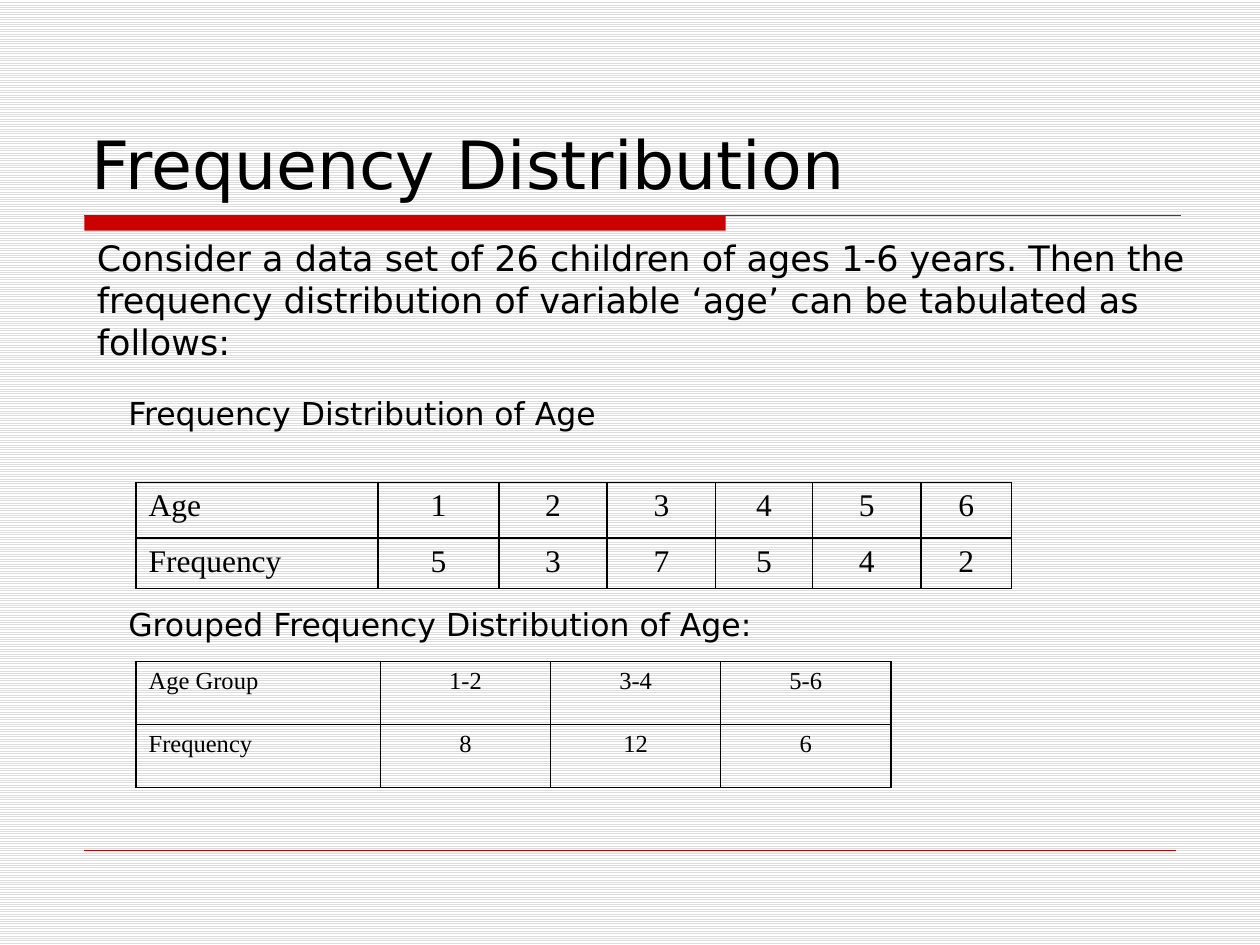
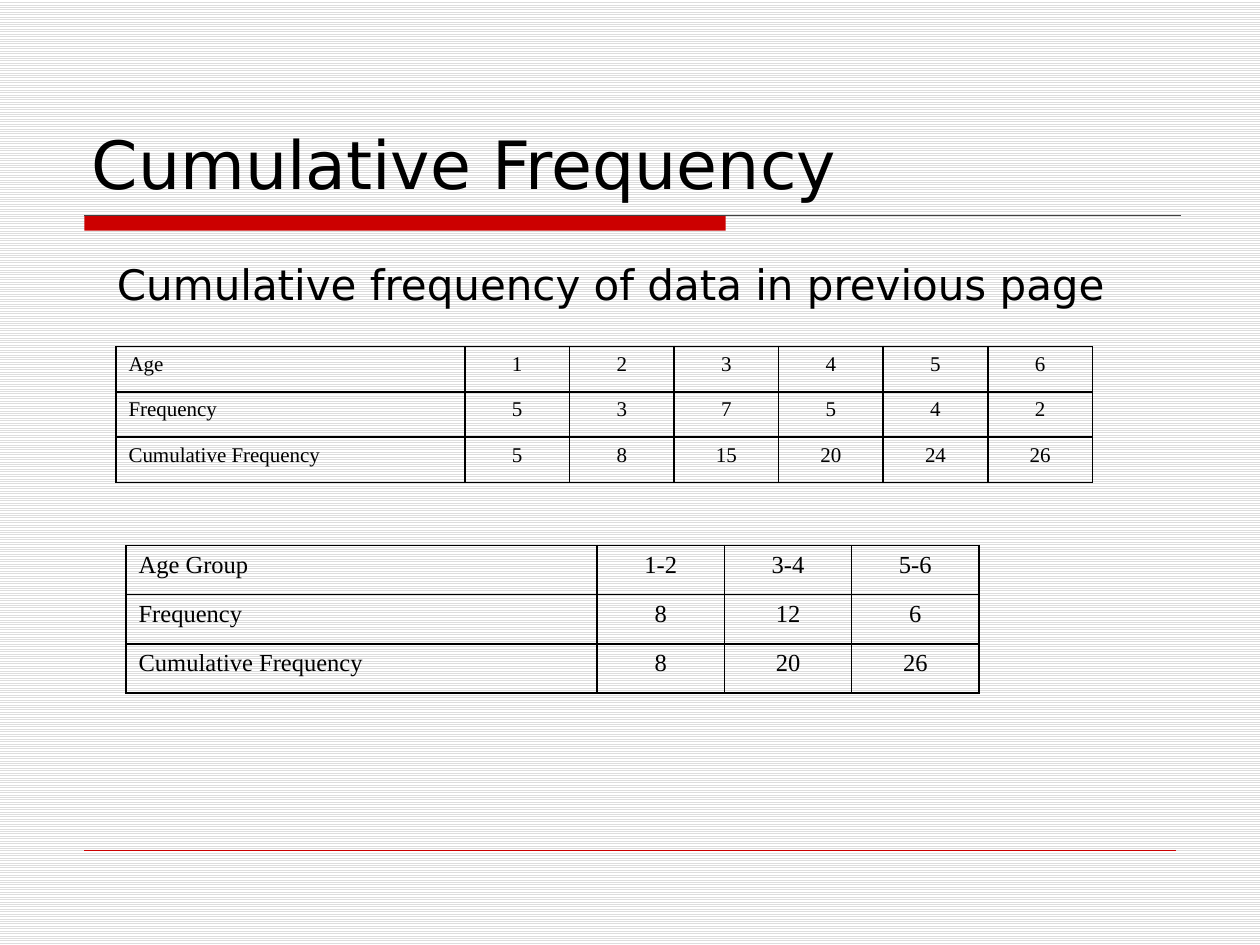
"""Build two slides on frequency and cumulative frequency tables."""
from lxml.etree import SubElement
from pptx import Presentation
from pptx.dml.color import RGBColor
from pptx.enum.dml import MSO_PATTERN
from pptx.enum.shapes import MSO_CONNECTOR, MSO_SHAPE
from pptx.enum.text import MSO_ANCHOR, PP_ALIGN
from pptx.oxml.ns import qn
from pptx.util import Inches, Pt

BLACK = RGBColor(0x00, 0x00, 0x00)
WHITE = RGBColor(0xFF, 0xFF, 0xFF)
RED = RGBColor(0xCC, 0x00, 0x00)
RULE_GREY = RGBColor(0x40, 0x40, 0x40)
STRIPE_GREY = RGBColor(0xDD, 0xDD, 0xDD)
SANS, SERIF = "DejaVu Sans", "Times New Roman"
WIDTH, HEIGHT = 10, 7.5
MARGIN, RULE_TOP, FOOT_TOP = 0.67, 1.71, 6.75
TITLE_AREA = (0.63, 0.33, 8.75, 1.33)

AGES = ["Age", 1, 2, 3, 4, 5, 6]
AGE_COUNTS = ["Frequency", 5, 3, 7, 5, 4, 2]
AGE_TOTALS = ["Cumulative Frequency", 5, 8, 15, 20, 24, 26]
GROUPS = ["Age Group", "1-2", "3-4", "5-6"]
GROUP_COUNTS = ["Frequency", 8, 12, 6]
GROUP_TOTALS = ["Cumulative Frequency", 8, 20, 26]

SLIDES = [
    {
        "title": "Frequency Distribution",
        "texts": [
            ("Consider a data set of 26 children of ages 1-6 years. Then the frequency "
             "distribution of variable ‘age’ can be tabulated as follows:",
             (0.67, 1.83, 9.33, 1.1), 20),
            ("Frequency Distribution of Age", (0.92, 3.08, 4.17, 0.4), 18),
            ("Grouped Frequency Distribution of Age:", (0.92, 4.75, 8.25, 0.4), 18),
        ],
        "tables": [
            {"rows": [AGES, AGE_COUNTS], "at": (1.08, 3.83), "size": 18,
             "widths": [1.92, 0.96, 0.86, 0.86, 0.77, 0.86, 0.72], "heights": [0.44, 0.31]},
            {"rows": [GROUPS, GROUP_COUNTS], "at": (1.08, 5.25), "size": 14,
             "widths": [1.94] + [1.35] * 3, "heights": [0.5] * 2},
        ],
    },
    {
        "title": "Cumulative Frequency",
        "texts": [
            ("Cumulative frequency of data in previous page", (0.83, 2, 8.67, 0.5), 24),
        ],
        "tables": [
            {"rows": [AGES, AGE_COUNTS, AGE_TOTALS], "at": (0.92, 2.75), "size": 12,
             "widths": [2.77] + [0.83] * 6, "heights": [0.36] * 3},
            {"rows": [GROUPS, GROUP_COUNTS, GROUP_TOTALS], "at": (1, 4.33), "size": 14,
             "widths": [3.74] + [1.01] * 3, "heights": [0.39] * 3},
        ],
    },
]


def write(frame, text, size, font=SANS, align=PP_ALIGN.LEFT, anchor=MSO_ANCHOR.TOP):
    frame.word_wrap = True
    frame.vertical_anchor = anchor
    para = frame.paragraphs[0]
    para.alignment = align
    span = para.add_run()
    span.text = str(text)
    span.font.name, span.font.size = font, Pt(size)
    span.font.color.rgb = BLACK


def add_text(page, text, area, size, **style):
    box = page.shapes.add_textbox(*map(Inches, area))
    write(box.text_frame, text, size, **style)


def add_rule(page, left, right, top, color, weight):
    rule = page.shapes.add_connector(
        MSO_CONNECTOR.STRAIGHT, *map(Inches, (left, top, right, top)))
    rule.line.color.rgb, rule.line.width = color, Pt(weight)
    SubElement(rule._element.spPr, qn("a:effectLst"))


def add_borders(cell, color=BLACK, weight=1):
    properties = cell._tc.get_or_add_tcPr()
    for position, side in enumerate(("lnL", "lnR", "lnT", "lnB")):
        edge = properties.makeelement(qn(f"a:{side}"), {"w": str(Pt(weight))})
        fill = SubElement(edge, qn("a:solidFill"))
        SubElement(fill, qn("a:srgbClr"), val=str(color))
        properties.insert(position, edge)


def add_grid(page, rows, at, size, widths, heights):
    area = (*at, sum(widths), sum(heights))
    table = page.shapes.add_table(len(rows), len(widths), *map(Inches, area)).table
    table.first_row = table.horz_banding = False
    for column, width in zip(table.columns, widths):
        column.width = Inches(width)
    for row, height, values in zip(table.rows, heights, rows):
        row.height = Inches(height)
        for index, (cell, value) in enumerate(zip(row.cells, values)):
            cell.fill.background()
            add_borders(cell)
            align = PP_ALIGN.CENTER if index else PP_ALIGN.LEFT
            write(cell.text_frame, value, size, font=SERIF, align=align)


def add_page(deck, title):
    page = deck.slides.add_slide(deck.slide_layouts[6])
    fill = page.background.fill
    fill.patterned()
    fill.pattern = MSO_PATTERN.LIGHT_HORIZONTAL
    fill.fore_color.rgb, fill.back_color.rgb = STRIPE_GREY, WHITE
    band = page.shapes.add_shape(
        MSO_SHAPE.RECTANGLE, *map(Inches, (MARGIN, RULE_TOP, 5.09, 0.12)))
    band.shadow.inherit = False
    band.fill.solid()
    band.fill.fore_color.rgb = RED
    band.line.fill.background()
    add_rule(page, MARGIN, 9.37, RULE_TOP, RULE_GREY, 0.75)
    add_rule(page, MARGIN, WIDTH - MARGIN, FOOT_TOP, RED, 0.25)
    add_text(page, title, TITLE_AREA, 38, anchor=MSO_ANCHOR.BOTTOM)
    return page


def main():
    deck = Presentation()
    deck.slide_width, deck.slide_height = Inches(WIDTH), Inches(HEIGHT)
    for content in SLIDES:
        page = add_page(deck, content["title"])
        for text, area, size in content["texts"]:
            add_text(page, text, area, size)
        for grid in content["tables"]:
            add_grid(page, **grid)
    deck.save("out.pptx")


if __name__ == "__main__":
    main()
